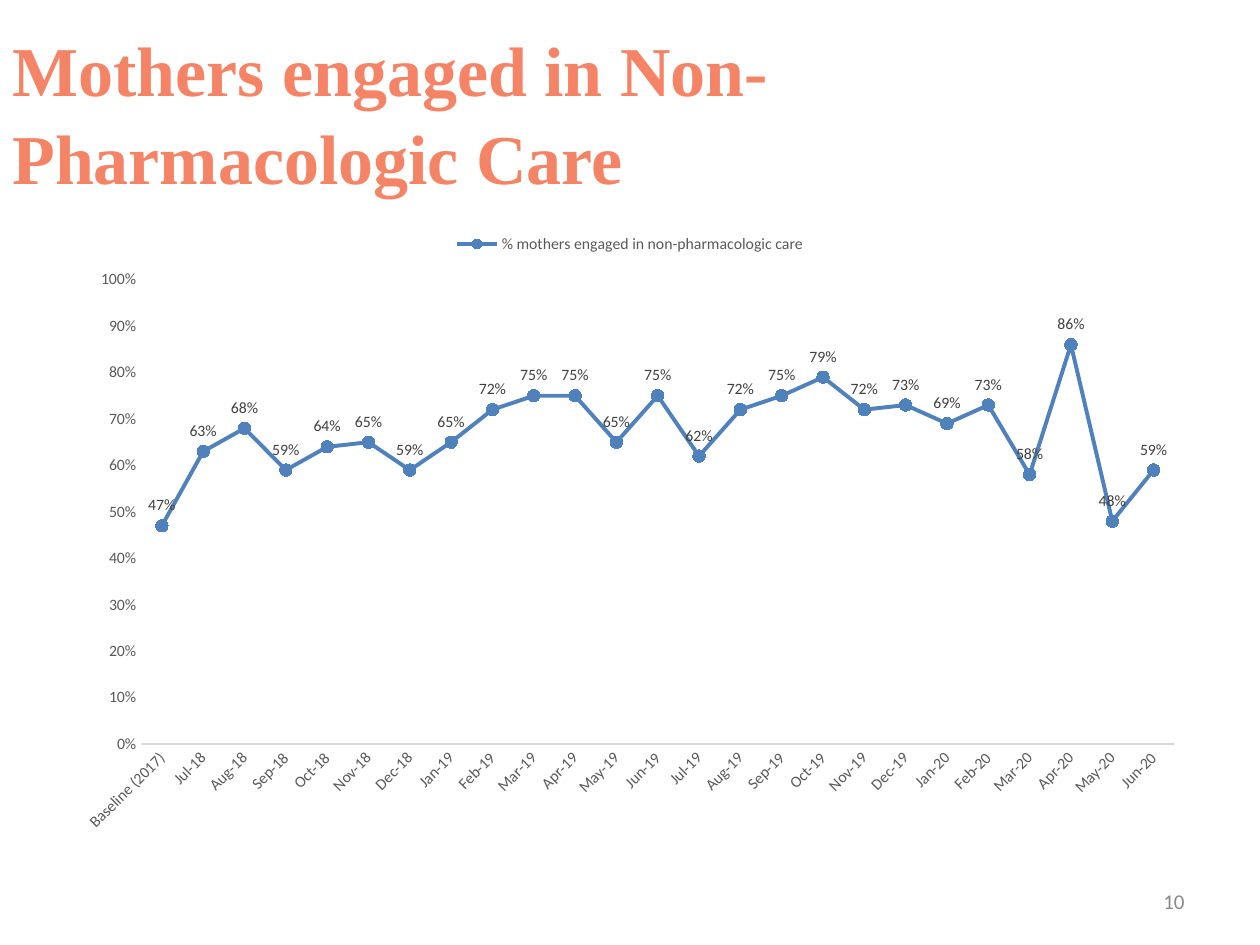
from pptx import Presentation
from pptx.chart.data import CategoryChartData
from pptx.dml.color import RGBColor
from pptx.enum.chart import (XL_CHART_TYPE, XL_LABEL_POSITION, XL_LEGEND_POSITION,
                             XL_MARKER_STYLE, XL_TICK_MARK)
from pptx.enum.text import MSO_ANCHOR, PP_ALIGN
from pptx.util import Inches, Pt

BLACK = RGBColor(0x00, 0x00, 0x00)
CORAL = RGBColor(0xF5, 0x84, 0x66)
BLUE = RGBColor(0x4F, 0x81, 0xBD)
LABEL_GRAY = RGBColor(0x40, 0x40, 0x40)
AXIS_GRAY = RGBColor(0x59, 0x59, 0x59)
NUMBER_GRAY = RGBColor(0x89, 0x89, 0x89)
LINE_GRAY = RGBColor(0xD9, 0xD9, 0xD9)

MONTHS = ["Jan", "Feb", "Mar", "Apr", "May", "Jun",
          "Jul", "Aug", "Sep", "Oct", "Nov", "Dec"]
PERCENTAGES = [47, 63, 68, 59, 64, 65, 59, 65, 72, 75, 75, 65, 75,
               62, 72, 75, 79, 72, 73, 69, 73, 58, 86, 48, 59]


def style_font(font, size, color, name="Calibri", bold=False):
    values = {"size": Pt(size), "name": name, "bold": bold}
    for attribute, value in values.items():
        setattr(font, attribute, value)
    font.color.rgb = color


def fill_text(shape, text, alignment):
    """Write one vertically centred paragraph and return it."""
    frame = shape.text_frame
    frame.word_wrap = True
    frame.vertical_anchor = MSO_ANCHOR.MIDDLE
    paragraph = frame.paragraphs[0]
    paragraph.alignment = alignment
    paragraph.add_run().text = text
    return paragraph


presentation = Presentation()
presentation.slide_width = Inches(10)
presentation.slide_height = Inches(7.5)
slide = presentation.slides.add_slide(presentation.slide_layouts[6])

# Title and slide number
title = slide.shapes.add_textbox(Inches(0), Inches(0.25), Inches(7.33), Inches(1.25))
paragraph = fill_text(title, "Mothers engaged in Non-Pharmacologic Care", PP_ALIGN.LEFT)
paragraph.line_spacing = 1.05
style_font(paragraph.runs[0].font, 40, CORAL, "Times New Roman", True)

slide_number = slide.shapes.add_textbox(Inches(7.17), Inches(6.95), Inches(2.33), Inches(0.4))
paragraph = fill_text(slide_number, "10", PP_ALIGN.RIGHT)
style_font(paragraph.runs[0].font, 12, NUMBER_GRAY)

# Chart data: a baseline, then each month from July 2018 to June 2020
chart_data = CategoryChartData(number_format="0%")
chart_data.categories = ["Baseline (2017)"] + [
    f"{MONTHS[month % 12]}-{18 + month // 12}" for month in range(6, 30)]
chart_data.add_series("% mothers engaged in non-pharmacologic care",
                      [percentage / 100 for percentage in PERCENTAGES])
chart = slide.shapes.add_chart(XL_CHART_TYPE.LINE_MARKERS, Inches(0.5), Inches(1.75),
                               Inches(9), Inches(4.95), chart_data).chart
style_font(chart.font, 10, BLACK)
chart.has_title = False
chart.has_legend = True
chart.legend.position = XL_LEGEND_POSITION.TOP
chart.legend.include_in_layout = False
style_font(chart.legend.font, 9, AXIS_GRAY)

# Axes
for axis in (chart.category_axis, chart.value_axis):
    axis.has_major_gridlines = False
    axis.major_tick_mark = XL_TICK_MARK.NONE
    axis.minor_tick_mark = XL_TICK_MARK.NONE
    style_font(axis.tick_labels.font, 9, AXIS_GRAY)

category_axis = chart.category_axis
category_axis.format.line.color.rgb = LINE_GRAY
category_axis.format.line.width = Pt(0.75)
label_body = category_axis._element.txPr.bodyPr
label_body.set("rot", "-2700000")
label_body.set("vert", "horz")

value_axis = chart.value_axis
value_axis.format.line.fill.background()
value_axis.minimum_scale = 0
value_axis.maximum_scale = 1
value_axis.major_unit = 0.1
value_axis.tick_labels.number_format = "0%"
value_axis.tick_labels.number_format_is_linked = False

# Line, markers and data labels
plot = chart.plots[0]
plot.vary_by_categories = False
series = plot.series[0]
series.smooth = False
series.format.line.color.rgb = BLUE
series.format.line.width = Pt(2.25)
series.marker.style = XL_MARKER_STYLE.CIRCLE
series.marker.size = 7
series.marker.format.fill.solid()
series.marker.format.fill.fore_color.rgb = BLUE
series.marker.format.line.color.rgb = BLUE

labels = series.data_labels
label_format = {"show_value": True, "position": XL_LABEL_POSITION.ABOVE,
                "number_format": "0%", "number_format_is_linked": False}
for attribute, value in label_format.items():
    setattr(labels, attribute, value)
style_font(labels.font, 9, LABEL_GRAY)

presentation.save("out.pptx")
